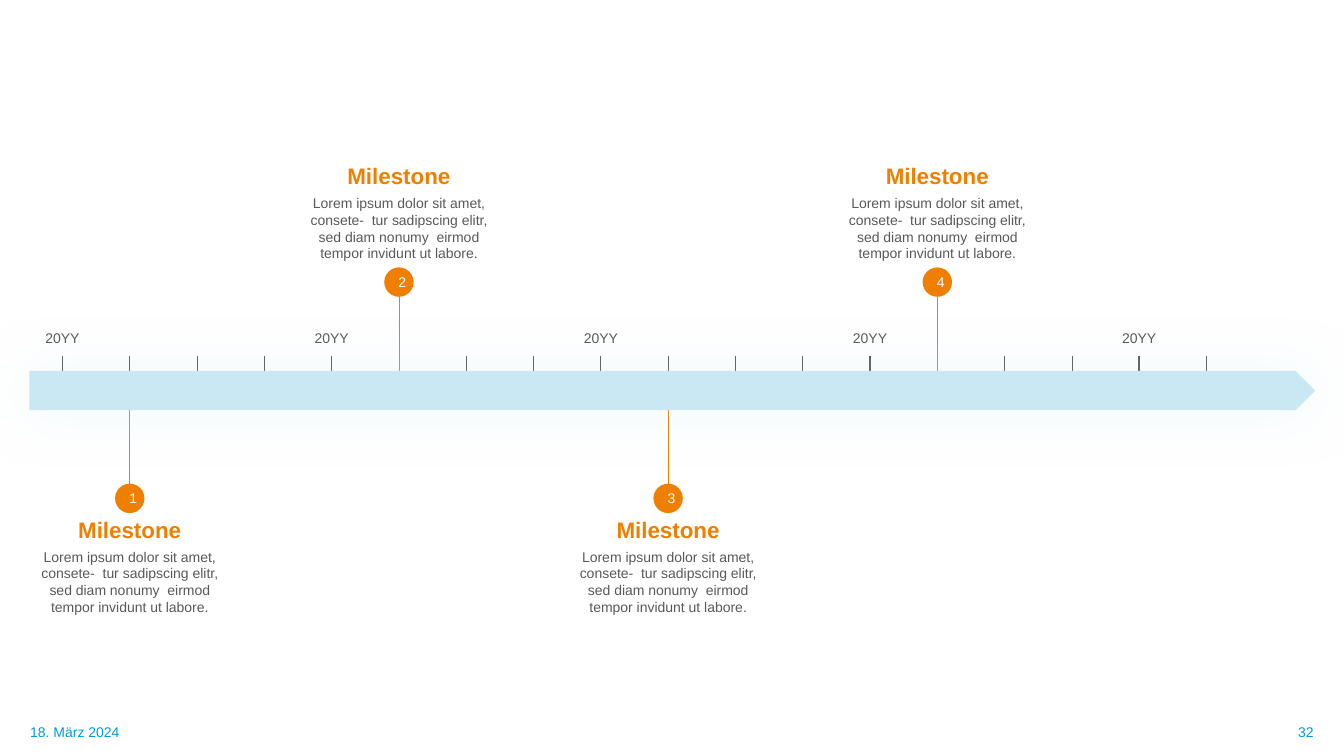
"""Build a timeline slide with four numbered milestones."""
import lxml.etree
import pptx
import pptx.dml.color
import pptx.enum.shapes
import pptx.enum.text
import pptx.oxml.ns
import pptx.util

Pt = pptx.util.Pt
RGBColor = pptx.dml.color.RGBColor
Shape = pptx.enum.shapes.MSO_SHAPE
Align = pptx.enum.text.PP_ALIGN
Anchor = pptx.enum.text.MSO_ANCHOR
qn = pptx.oxml.ns.qn

ORANGE = RGBColor(0xEE, 0x7F, 0x00)
GREY = RGBColor(0x58, 0x58, 0x59)
BODY_GREY = RGBColor(0x58, 0x59, 0x5B)
BLUE = RGBColor(0x00, 0x9C, 0xD7)
PALE_BLUE = RGBColor(0xCA, 0xE8, 0xF3)
WHITE = RGBColor(0xFF, 0xFF, 0xFF)

FIRST_TICK = 44.6
TICK_STEP = 48.07
TICK_COUNT = 18
TICKS_PER_YEAR = 4
TICK_TOP = 254
BAR_LEFT, BAR_TOP, BAR_WIDTH, BAR_HEIGHT = 21, 265, 918.5, 28
BAR_MIDDLE = BAR_TOP + BAR_HEIGHT / 2
DOT_SIZE = 21
TEXT_WIDTH = 142
YEAR_WIDTH = 35
MARGIN = 21.6
FOOTER_TOP = 516.5
BODY = ("Lorem ipsum dolor sit amet, consete-  tur sadipscing elitr, "
        "sed diam nonumy  eirmod tempor invidunt ut labore.")
ABOVE = {"dot_top": 191, "title_top": 116}
BELOW = {"dot_top": 345.5, "title_top": 368.5}
MILESTONES = [(1, BELOW), (5, ABOVE), (9, BELOW), (13, ABOVE)]


def tick_x(index):
    """Return the horizontal position of a tick on the timeline."""
    return FIRST_TICK + index * TICK_STEP


def style_paragraph(para, size, color, align, bold=False):
    """Set the font and alignment of a paragraph."""
    para.alignment = align
    para.font.name = "Arial"
    para.font.size = Pt(size)
    para.font.bold = bold
    para.font.color.rgb = color


def add_text(page, text, left, top, width, height, color,
             size=10, align=Align.CENTER, bold=False):
    """Add a text box without insets and return its paragraph."""
    box = page.shapes.add_textbox(Pt(left), Pt(top), Pt(width), Pt(height))
    frame = box.text_frame
    frame.word_wrap = True
    frame.margin_left = frame.margin_right = Pt(0)
    frame.margin_top = frame.margin_bottom = Pt(0)
    para = frame.paragraphs[0]
    para.text = text
    style_paragraph(para, size, color, align, bold)
    return para


def add_vertical_line(page, x, top, bottom, color, weight):
    """Add a straight vertical line without a shadow."""
    line = page.shapes.add_connector(
        pptx.enum.shapes.MSO_CONNECTOR.STRAIGHT, Pt(x), Pt(top), Pt(x), Pt(bottom))
    line.line.color.rgb = color
    line.line.width = Pt(weight)
    lxml.etree.SubElement(line._element.spPr, qn("a:effectLst"))


def add_filled_shape(page, kind, left, top, width, height, color):
    """Add a preset shape with a plain fill and no outline."""
    shape = page.shapes.add_shape(kind, Pt(left), Pt(top), Pt(width), Pt(height))
    shape.shadow.inherit = False
    shape.fill.solid()
    shape.fill.fore_color.rgb = color
    shape.line.fill.background()
    return shape


def add_glow(shape, color, blur, opacity):
    """Give a shape a soft shadow around its outline."""
    effects = shape._element.spPr.find(qn("a:effectLst"))
    shadow = lxml.etree.SubElement(
        effects, qn("a:outerShdw"), blurRad=str(Pt(blur)), dist="0",
        algn="ctr", rotWithShape="0")
    tint = lxml.etree.SubElement(shadow, qn("a:srgbClr"), val=str(color))
    lxml.etree.SubElement(tint, qn("a:alpha"), val=str(opacity * 1000))


def add_ticks(page):
    """Add the ticks, heavier and labelled at the start of each year."""
    stems_above = {tick for tick, side in MILESTONES if side is ABOVE}
    for index in range(TICK_COUNT):
        x = tick_x(index)
        starts_year = index % TICKS_PER_YEAR == 0
        if index not in stems_above:
            add_vertical_line(page, x, TICK_TOP, BAR_TOP + 1.5, GREY,
                              1 if starts_year else 0.35)
        if starts_year and index < TICK_COUNT - 1:
            add_text(page, "20YY", x - YEAR_WIDTH / 2, 235.5, YEAR_WIDTH, 12, GREY)


def add_milestone(page, number, x, dot_top, title_top):
    """Add a stem, a numbered dot, a title and a description."""
    dot_middle = dot_top + DOT_SIZE / 2
    add_vertical_line(page, x, min(dot_middle, BAR_MIDDLE),
                      max(dot_middle, BAR_MIDDLE), ORANGE, 0.35)
    dot = add_filled_shape(page, Shape.OVAL, x - DOT_SIZE / 2, dot_top,
                           DOT_SIZE, DOT_SIZE, ORANGE)
    dot.text_frame.text = str(number)
    dot.text_frame.vertical_anchor = Anchor.MIDDLE
    style_paragraph(dot.text_frame.paragraphs[0], 10, WHITE, Align.CENTER)
    left = x - TEXT_WIDTH / 2
    add_text(page, "Milestone", left, title_top, TEXT_WIDTH, 19, ORANGE,
             size=16, bold=True)
    body = add_text(page, BODY, left, title_top + 23, TEXT_WIDTH, 48, BODY_GREY)
    body.line_spacing = Pt(12)


def add_footer(page):
    """Add the date and the page number."""
    add_text(page, "18. März 2024", MARGIN, FOOTER_TOP, 270, 12, BLUE, align=Align.LEFT)
    add_text(page, "32", 960 - MARGIN - 26, FOOTER_TOP, 26, 12, BLUE, align=Align.RIGHT)


def main():
    """Build the deck and save it."""
    deck = pptx.Presentation()
    deck.slide_width, deck.slide_height = Pt(960), Pt(540)
    page = deck.slides.add_slide(deck.slide_layouts[6])
    add_footer(page)
    add_ticks(page)
    for number, (tick, side) in enumerate(MILESTONES, start=1):
        add_milestone(page, number, tick_x(tick), **side)
    bar = add_filled_shape(page, Shape.PENTAGON, BAR_LEFT, BAR_TOP,
                           BAR_WIDTH, BAR_HEIGHT, PALE_BLUE)
    add_glow(bar, PALE_BLUE, blur=42, opacity=28)
    deck.save("out.pptx")


if __name__ == "__main__":
    main()
